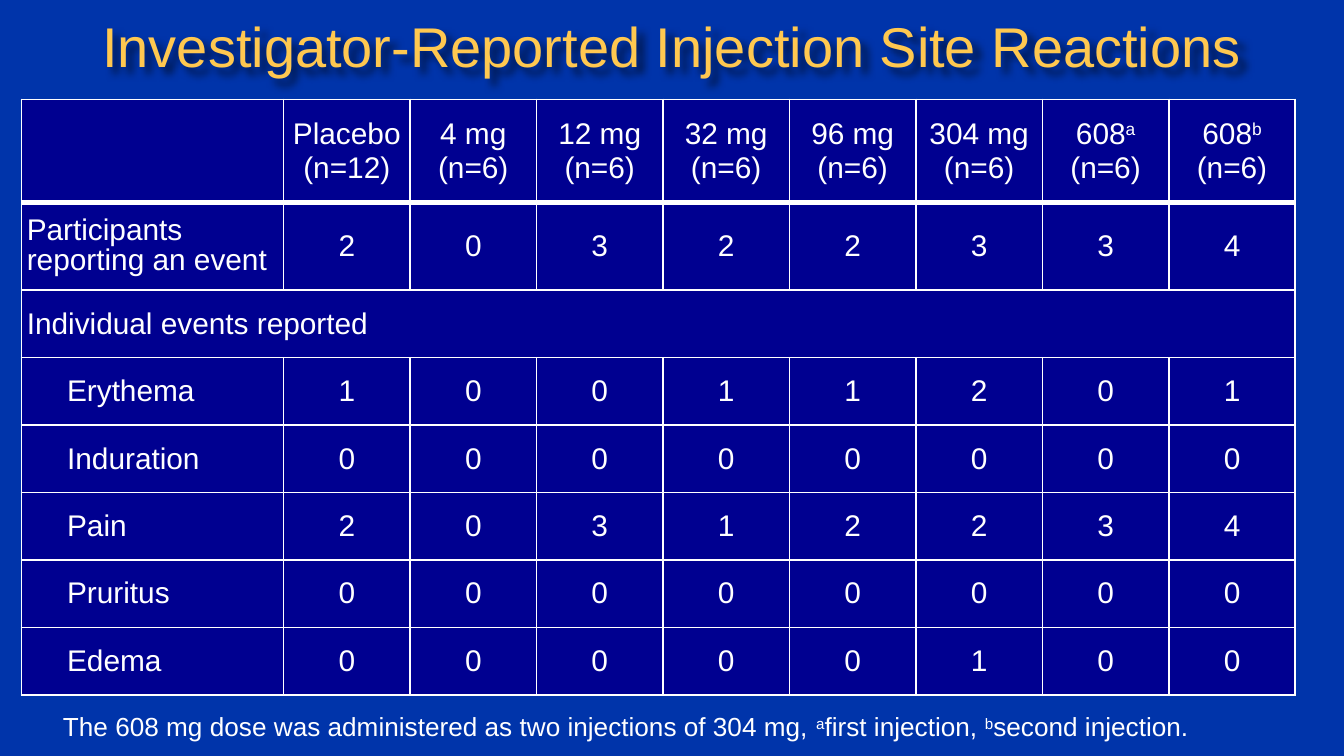
from lxml.etree import SubElement
from pptx import Presentation
from pptx.dml.color import RGBColor
from pptx.enum.text import MSO_ANCHOR as Anchor, MSO_AUTO_SIZE as AutoSize, PP_ALIGN as Align
from pptx.oxml.ns import qn
from pptx.util import Inches, Pt

DOSES = ["Placebo (n=12)", "4 mg (n=6)", "12 mg (n=6)", "32 mg (n=6)", "96 mg (n=6)", "304 mg (n=6)"]
PARTICIPANTS = [2, 0, 3, 2, 2, 3, 3, 4]
EVENTS = {
    "Erythema": [1, 0, 0, 1, 1, 2, 0, 1],
    "Induration": [0] * 8,
    "Pain": [2, 0, 3, 1, 2, 2, 3, 4],
    "Pruritus": [0] * 8,
    "Edema": [0, 0, 0, 0, 0, 1, 0, 0],
}
TABLE_WIDTH, LABEL_WIDTH = 9.48, 1.95
TABLE_HEIGHT, HEADER_HEIGHT, PARTICIPANTS_HEIGHT = 4.43, 0.77, 0.65
COLUMN_WIDTHS = [LABEL_WIDTH] + [(TABLE_WIDTH - LABEL_WIDTH) / 8] * 8
EVENT_HEIGHT = (TABLE_HEIGHT - HEADER_HEIGHT - PARTICIPANTS_HEIGHT) / 6
ROW_HEIGHTS = [HEADER_HEIGHT, PARTICIPANTS_HEIGHT] + [EVENT_HEIGHT] * 6


def color(hex_code):
    return RGBColor.from_string(hex_code)


class ReactionSlide:
    font, white, gold = "Arial", "FFFFFF", "FFC850"
    background, cell_fill = "0034AA", "000090"

    def __init__(self, deck):
        self.slide = deck.slides.add_slide(deck.slide_layouts[5])
        fill = self.slide.background.fill
        fill.solid()
        fill.fore_color.rgb = color(self.background)

    def run(self, paragraph, words, size, hex_code=white, raised=False):
        run = paragraph.add_run()
        run.text = words
        run.font.name, run.font.size = self.font, Pt(size)
        run.font.color.rgb = color(hex_code)
        if raised:
            run.font._element.set("baseline", "30000")

    def title(self, words, left, top, width, height):
        heading = self.slide.shapes.title
        heading.left, heading.top = Inches(left), Inches(top)
        heading.width, heading.height = Inches(width), Inches(height)
        frame = heading.text_frame
        frame.auto_size, frame.vertical_anchor = AutoSize.NONE, Anchor.MIDDLE
        frame.paragraphs[0].alignment = Align.CENTER
        self.run(frame.paragraphs[0], words, 30, self.gold)
        # The unfilled title casts its soft shadow from the letters
        heading.fill.background()
        effects = SubElement(heading._element.spPr, qn("a:effectLst"))
        shadow = SubElement(effects, qn("a:outerShdw"), blurRad="50800", dist="50800", dir="2700000")
        black = SubElement(shadow, qn("a:srgbClr"), val="000000")
        SubElement(black, qn("a:alpha"), val="60000")

    def table(self, left, top, widths, heights):
        grid = self.slide.shapes.add_table(
            len(heights), len(widths), Inches(left), Inches(top),
            Inches(sum(widths)), Inches(sum(heights))).table
        for column, width in zip(grid.columns, widths):
            column.width = Inches(width)
        for row_index, (row, height) in enumerate(zip(grid.rows, heights)):
            row.height = Inches(height)
            for cell in row.cells:
                self.style_cell(cell, 3 if row_index == 0 else 1, 3 if row_index == 1 else 1)
        return grid

    def style_cell(self, cell, bottom, top):
        properties = cell._tc.get_or_add_tcPr()
        for side, points in (("L", 1), ("R", 1), ("T", top), ("B", bottom)):
            line = SubElement(properties, qn(f"a:ln{side}"), w=str(Pt(points)))
            SubElement(SubElement(line, qn("a:solidFill")), qn("a:srgbClr"), val=self.white)
        cell.fill.solid()
        cell.fill.fore_color.rgb = color(self.cell_fill)
        cell.vertical_anchor = Anchor.MIDDLE
        cell.margin_left = cell.margin_right = cell.margin_top = cell.margin_bottom = 0

    def value(self, cell, words):
        paragraph = cell.text_frame.paragraphs[0]
        paragraph.alignment = Align.CENTER
        self.run(paragraph, str(words), 16)
        return paragraph

    def label(self, cell, words, indent=0.0, spacing=None):
        cell.margin_left = Inches(0.04)
        paragraph = cell.text_frame.paragraphs[0]
        paragraph.line_spacing = spacing
        if indent:
            paragraph._p.get_or_add_pPr().set("marL", str(Inches(indent)))
        self.run(paragraph, words, 16)

    def footnote(self, pieces, left, top, width, height):
        note = self.slide.shapes.add_textbox(Inches(left), Inches(top), Inches(width), Inches(height))
        note.text_frame.word_wrap = False
        note.text_frame.auto_size = AutoSize.SHAPE_TO_FIT_TEXT
        for words, raised in pieces:
            self.run(note.text_frame.paragraphs[0], words, 14, raised=raised)


def main():
    deck = Presentation()
    deck.slide_width, deck.slide_height = Inches(10), Inches(10 * 9 / 16)
    page = ReactionSlide(deck)
    page.title("Investigator-Reported Injection Site Reactions", 0, 0.01, 10, 0.65)

    # Header row: doses, then the two 608 mg injections
    reactions = page.table(0.16, 0.74, COLUMN_WIDTHS, ROW_HEIGHTS)
    for column, dose in enumerate(DOSES, 1):
        page.value(reactions.cell(0, column), dose)
    for column, mark in enumerate("ab", len(DOSES) + 1):
        dose_line = page.value(reactions.cell(0, column), "608")
        page.run(dose_line, mark, 16, raised=True)
        dose_line.add_line_break()
        page.run(dose_line, "(n=6)", 16)

    # Row labels
    page.label(reactions.cell(1, 0), "Participants reporting an event", spacing=0.9)
    reactions.cell(2, 0).merge(reactions.cell(2, len(COLUMN_WIDTHS) - 1))
    page.label(reactions.cell(2, 0), "Individual events reported")
    for row, event in enumerate(EVENTS, 3):
        page.label(reactions.cell(row, 0), event, indent=0.3)

    # Counts
    for row, counts in {1: PARTICIPANTS, **dict(enumerate(EVENTS.values(), 3))}.items():
        for column, count in enumerate(counts, 1):
            page.value(reactions.cell(row, column), count)

    page.footnote([
        ("The 608 mg dose was administered as two injections of 304 mg, ", False),
        ("a", True), ("first injection, ", False),
        ("b", True), ("second injection.", False),
    ], 0.37, 5.24, 8.75, 0.34)
    deck.save("out.pptx")


if __name__ == "__main__":
    main()
